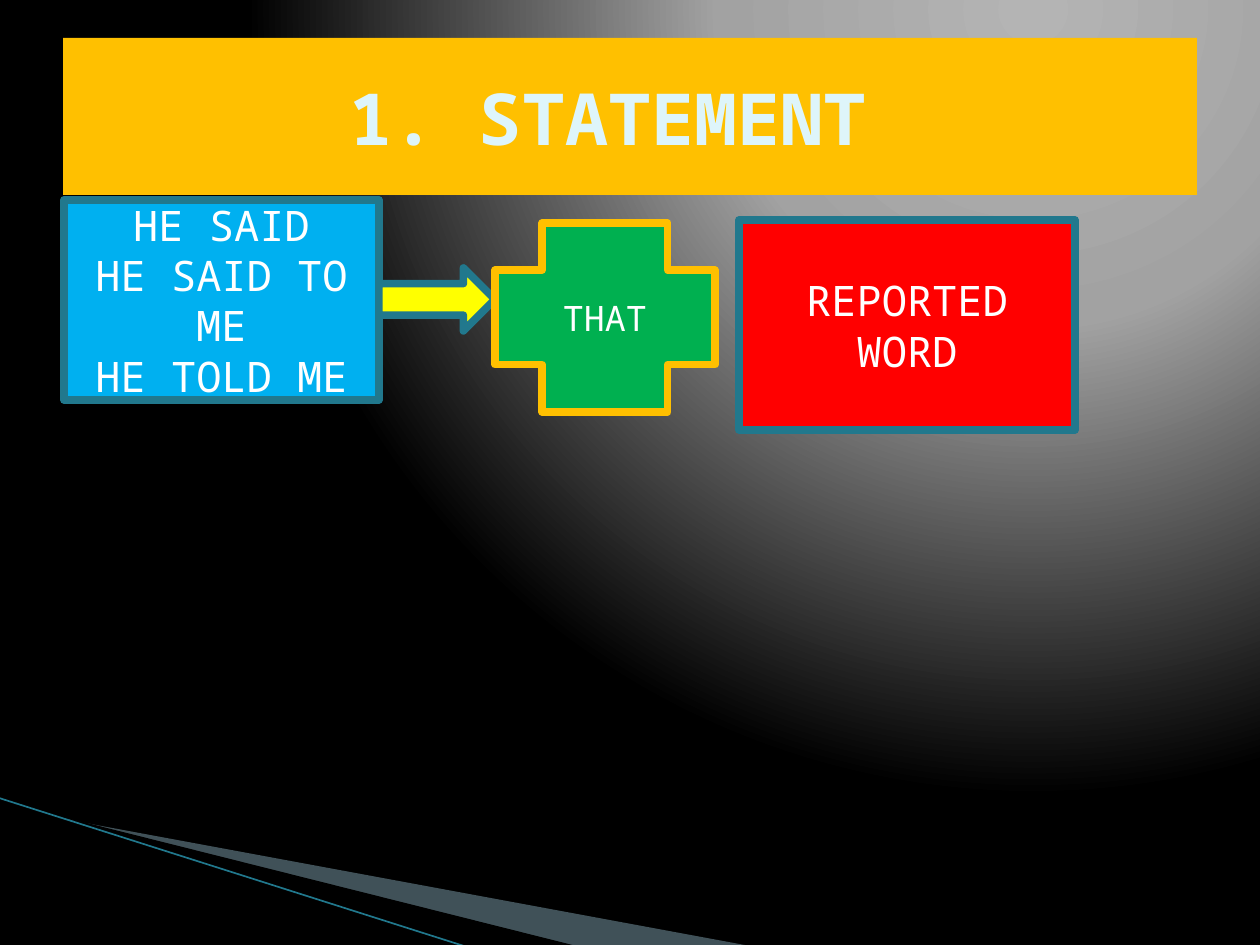
from pptx import Presentation
from pptx.dml.color import RGBColor
from pptx.enum.shapes import MSO_CONNECTOR, MSO_SHAPE
from pptx.enum.text import MSO_ANCHOR, MSO_AUTO_SIZE, PP_ALIGN
from pptx.oxml import parse_xml
from pptx.oxml.ns import nsdecls
from pptx.util import Pt

RECT, ARROW, PLUS = MSO_SHAPE.RECTANGLE, MSO_SHAPE.RIGHT_ARROW, MSO_SHAPE.CROSS
STRAIGHT = MSO_CONNECTOR.STRAIGHT
MIDDLE, CENTER, NO_FIT = MSO_ANCHOR.MIDDLE, PP_ALIGN.CENTER, MSO_AUTO_SIZE.NONE

PX = 914400 // 126  # EMU in one pixel
THEME = {
    "font": "Noto Sans Mono",
    "title_size": 41, "box_size": 24, "link_size": 20,
    "outline_width": 4.33, "hairline": 0.95,
    "glow": [(0, "B4B4B4"), (40, "A2A2A2"), (100, "000000")],
    "title_text": "DEF5FA", "text": "FFFFFF",
    "gold": "FFC000", "teal": "21788D", "blue": "00B0F0", "yellow": "FFFF00",
    "green": "00B050", "red": "FF0000", "wedge": "A0CBDC", "black": "000000",
}


def paint(s, fill, line=None):
    """Give a shape a flat fill and, if named, a round-cornered outline."""
    s.shadow.inherit = False
    s.fill.solid()
    s.fill.fore_color.rgb = RGBColor.from_string(THEME[fill])
    if line is None:
        s.line.fill.background()
        return
    s.line.color.rgb = RGBColor.from_string(THEME[line])
    s.line.width = Pt(THEME["outline_width"])
    s.line._ln.append(parse_xml(f"<a:round {nsdecls('a')}/>"))


def write(s, lines, size, color, bold=False):
    """Centre one paragraph per line in a shape."""
    tf = s.text_frame
    frame_format = {"word_wrap": True, "auto_size": NO_FIT, "vertical_anchor": MIDDLE}
    for name, value in frame_format.items():
        setattr(tf, name, value)
    tf.text = "\n".join(lines)
    for p in tf.paragraphs:
        p.alignment = CENTER
        for r in p.runs:
            font_format = {"name": THEME["font"], "size": Pt(THEME[size]), "bold": bold}
            for name, value in font_format.items():
                setattr(r.font, name, value)
            r.font.color.rgb = RGBColor.from_string(THEME[color])


prs = Presentation()
prs.slide_width, prs.slide_height = 1260 * PX, 945 * PX
slide = prs.slides.add_slide(prs.slide_layouts[5])

# Background: a circular glow centred near the top right
fill = slide.background.fill
fill.solid()
bg = slide._element.cSld.bg.bgPr
stops = "".join(
    f'<a:gs pos="{pos * 1000}"><a:srgbClr val="{color}"/></a:gs>'
    for pos, color in THEME["glow"]
)
bg.replace(bg[0], parse_xml(
    f'<a:gradFill {nsdecls("a")} rotWithShape="1"><a:gsLst>{stops}</a:gsLst>'
    '<a:path path="circle"><a:fillToRect l="65000" t="0" r="0" b="98000"/></a:path>'
    "</a:gradFill>"
))

# Corner decoration
wedges = [
    ("wedge", [(69, 820), (750, 946), (575, 946), (69, 819)]),
    ("black", [(67, 818), (576, 946), (469, 947), (68, 819)]),
]
for color, points in wedges:
    builder = slide.shapes.build_freeform(*points[0], scale=PX)
    builder.add_line_segments(points[1:], close=True)
    s = builder.convert_to_shape()
    paint(s, color)
    if color == "wedge":
        rgb = s.fill._xPr.solidFill[0]
        rgb.append(parse_xml(f'<a:alpha {nsdecls("a")} val="40000"/>'))

edge = slide.shapes.add_connector(STRAIGHT, -1 * PX, 798 * PX, 467 * PX, 947 * PX)
edge.line.color.rgb = RGBColor.from_string(THEME["teal"])
edge.line.width = Pt(THEME["hairline"])
edge._element.spPr.append(parse_xml(f"<a:effectLst {nsdecls('a')}/>"))

# Title bar
title = slide.shapes.title
title.left, title.top, title.width, title.height = (v * PX for v in (63, 38, 1134, 157))
title.fill.solid()
title.fill.fore_color.rgb = RGBColor.from_string(THEME["gold"])
write(title, ["1. STATEMENT "], "title_size", "title_text", bold=True)

# Sentence pattern, left to right
pattern = [
    (RECT, (64, 200, 315, 200), "blue", "teal",
     ["HE SAID", "HE SAID TO ME", "HE TOLD ME"], "box_size"),
    (ARROW, (379, 268, 116, 63), "yellow", "teal", [], None),
    (PLUS, (495, 223, 220, 189), "green", "gold", ["THAT"], "link_size"),
    (RECT, (739, 220, 336, 210), "red", "teal", ["REPORTED WORD"], "box_size"),
]
for kind, box, color, line, lines, size in pattern:
    s = slide.shapes.add_shape(kind, *(v * PX for v in box))
    paint(s, color, line)
    if lines:
        write(s, lines, size, "text")

prs.save("out.pptx")
